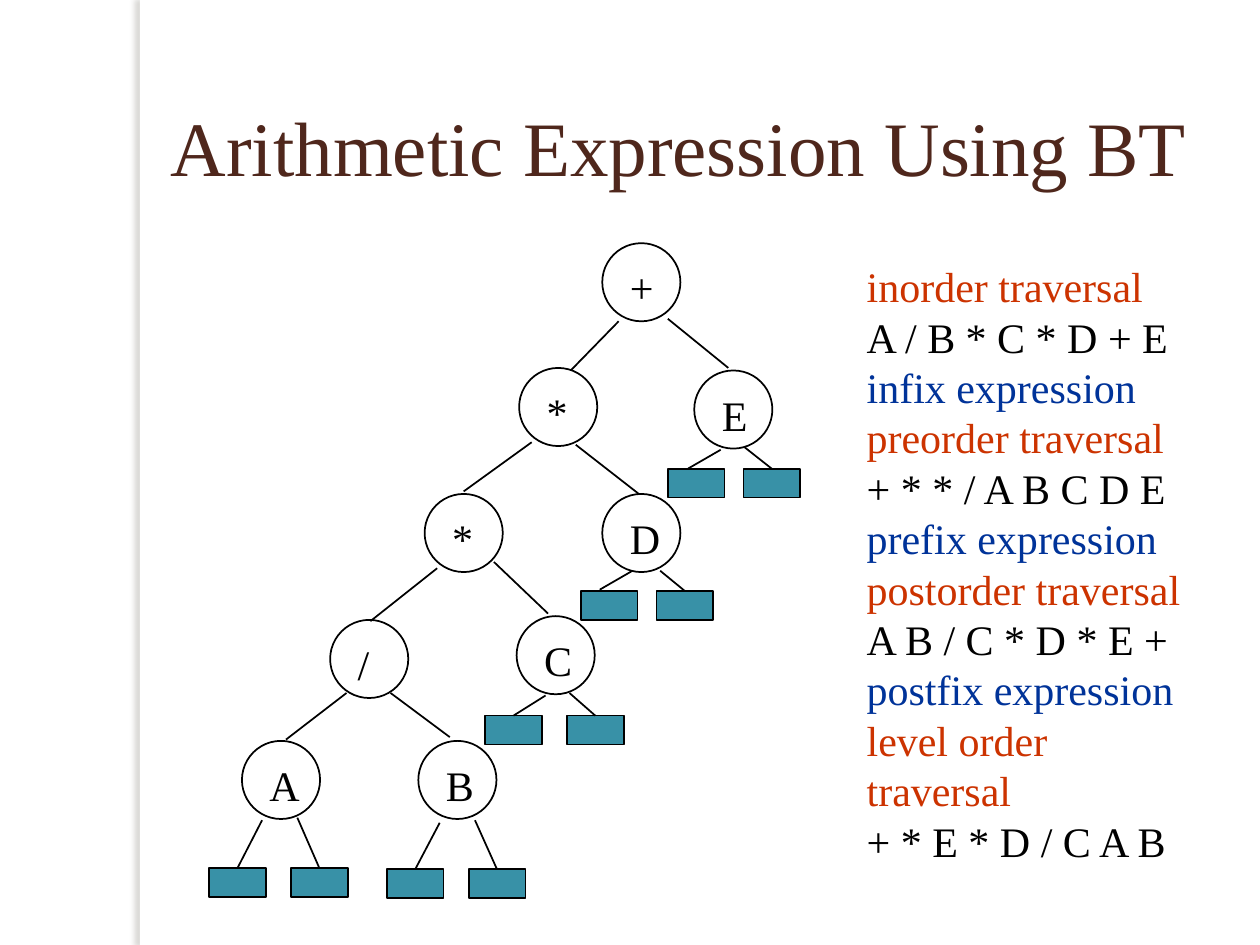
import pptx
import pptx.util
import pptx.dml.color
import pptx.enum.shapes
import pptx.enum.text
import pptx.oxml
import pptx.oxml.ns

Inches = pptx.util.Inches
Pt = pptx.util.Pt
SHAPE = pptx.enum.shapes.MSO_SHAPE
COLORS = {
    "white": "FFFFFF", "black": "000000", "title": "4F271C", "leaf": "3891A7",
    "traversal": "CC3300", "expression": "003399", "shadow": "736F63",
}
NODE_SIZE = 0.62
LEAF_WIDTH, LEAF_HEIGHT = 0.45, 0.23


def rgb(name):
    return pptx.dml.color.RGBColor.from_string(COLORS[name])


def write(paragraph, text, color="black", size=24, align=None, spacing=None):
    run = paragraph.add_run()
    run.text = text
    run.font.name = "Times New Roman"
    run.font.size = Pt(size)
    run.font.color.rgb = rgb(color)
    paragraph.alignment = align
    paragraph.line_spacing = spacing


deck = pptx.Presentation()
deck.slide_width, deck.slide_height = Inches(10), Inches(7.5)
slide = deck.slides.add_slide(deck.slide_layouts[5])
shapes = slide.shapes

side_strip = shapes.add_shape(SHAPE.RECTANGLE, Inches(1.11), 0, Inches(0.08), Inches(7.5))
side_strip.fill.solid()
side_strip.fill.fore_color.rgb = rgb("white")
side_strip.line.fill.background()
side_strip._element.spPr.append(pptx.oxml.parse_xml(
    f'<a:effectLst {pptx.oxml.ns.nsdecls("a")}>'
    f'<a:outerShdw blurRad="{Pt(3)}" dist="{Pt(3)}" dir="10800000" algn="tl" rotWithShape="0">'
    f'<a:srgbClr val="{COLORS["shadow"]}"><a:alpha val="25000"/></a:srgbClr>'
    '</a:outerShdw></a:effectLst>'))

title = shapes.title
title.left, title.top = Inches(0.38), Inches(0.53)
title.width, title.height = Inches(10.02), Inches(1.25)
title.text_frame.vertical_anchor = pptx.enum.text.MSO_ANCHOR.MIDDLE
write(title.text_frame.paragraphs[0], "Arithmetic Expression Using BT",
      color="title", size=44, align=pptx.enum.text.PP_ALIGN.CENTER)

nodes = [
    ("+", 4.78, 1.93), ("*", 4.12, 2.92), ("E", 5.51, 2.94),
    ("*", 3.37, 3.92), ("D", 4.78, 3.92), ("/", 2.62, 4.92),
    ("C", 4.10, 4.89), ("A", 1.92, 5.88), ("B", 3.32, 5.88),
]
for symbol, left, top in nodes:
    node = shapes.add_group_shape()
    circle = node.shapes.add_shape(
        SHAPE.OVAL, Inches(left), Inches(top), Inches(NODE_SIZE), Inches(NODE_SIZE))
    circle.shadow.inherit = False
    circle.fill.background()
    circle.line.color.rgb = rgb("black")
    circle.line.width = Pt(1)
    label = node.shapes.add_textbox(
        Inches(left + 0.12), Inches(top + 0.1), Inches(0.42), Inches(0.5))
    label.text_frame.word_wrap = False
    write(label.text_frame.paragraphs[0], symbol, spacing=Pt(28.8))

leaves = [
    (1.66, 6.89, (2.08, 6.51), None), (2.31, 6.89, (2.36, 6.49), None),
    (3.07, 6.90, (3.49, 6.53), None), (3.72, 6.90, (3.77, 6.51), None),
    (3.85, 5.68, (4.33, 5.52), None), (4.50, 5.68, (4.52, 5.50), None),
    (4.61, 4.69, (5.02, 4.53), (4.76, 4.68)), (5.21, 4.69, (5.24, 4.53), None),
    (5.30, 3.72, (5.72, 3.57), (5.46, 3.72)), (5.90, 3.72, (5.91, 3.55), None),
]
branches = [
    ((4.91, 2.55), (4.53, 2.94), None), ((5.30, 2.53), (5.78, 2.92), None),
    ((4.22, 3.51), (3.68, 3.90), None), ((4.57, 3.53), (5.07, 3.92), None),
    ((3.47, 4.51), (2.94, 4.93), None), ((3.92, 4.46), (4.35, 4.87), None),
    ((2.75, 5.50), (2.27, 5.87), None), ((3.10, 5.50), (3.57, 5.85), None),
]
for left, top, start, end in leaves:
    leaf = shapes.add_shape(
        SHAPE.RECTANGLE, Inches(left), Inches(top), Inches(LEAF_WIDTH), Inches(LEAF_HEIGHT))
    leaf.shadow.inherit = False
    leaf.fill.solid()
    leaf.fill.fore_color.rgb = rgb("leaf")
    leaf.line.color.rgb = rgb("black")
    leaf.line.width = Pt(1)
    joined_leaf = None if end else leaf
    branches.append((start, end or (left + LEAF_WIDTH / 2, top), joined_leaf))

for start, end, joined_leaf in branches:
    branch = shapes.add_connector(
        pptx.enum.shapes.MSO_CONNECTOR.STRAIGHT, *map(Inches, start + end))
    if joined_leaf is not None:
        branch.end_connect(joined_leaf, 0)
    branch.line.color.rgb = rgb("black")
    branch.line.width = Pt(1)
    branch._element.spPr.append(pptx.oxml.parse_xml(
        f'<a:effectLst {pptx.oxml.ns.nsdecls("a")}/>'))

orders = [
    ("inorder traversal", "traversal"), ("A / B * C * D + E", "black"),
    ("infix expression", "expression"),
    ("preorder traversal", "traversal"), ("+ * * / A B C D E", "black"),
    ("prefix expression", "expression"),
    ("postorder traversal", "traversal"), ("A B / C * D * E +", "black"),
    ("postfix expression", "expression"),
    ("level order traversal", "traversal"), ("+ * E * D / C A B", "black"),
]
traversals = shapes.add_textbox(Inches(6.78), Inches(2.02), Inches(2.84), Inches(4.9))
traversals.text_frame.word_wrap = True
for index, (text, color) in enumerate(orders):
    frame = traversals.text_frame
    paragraph = frame.add_paragraph() if index else frame.paragraphs[0]
    write(paragraph, text, color=color, spacing=Pt(28.8))

deck.save("out.pptx")
